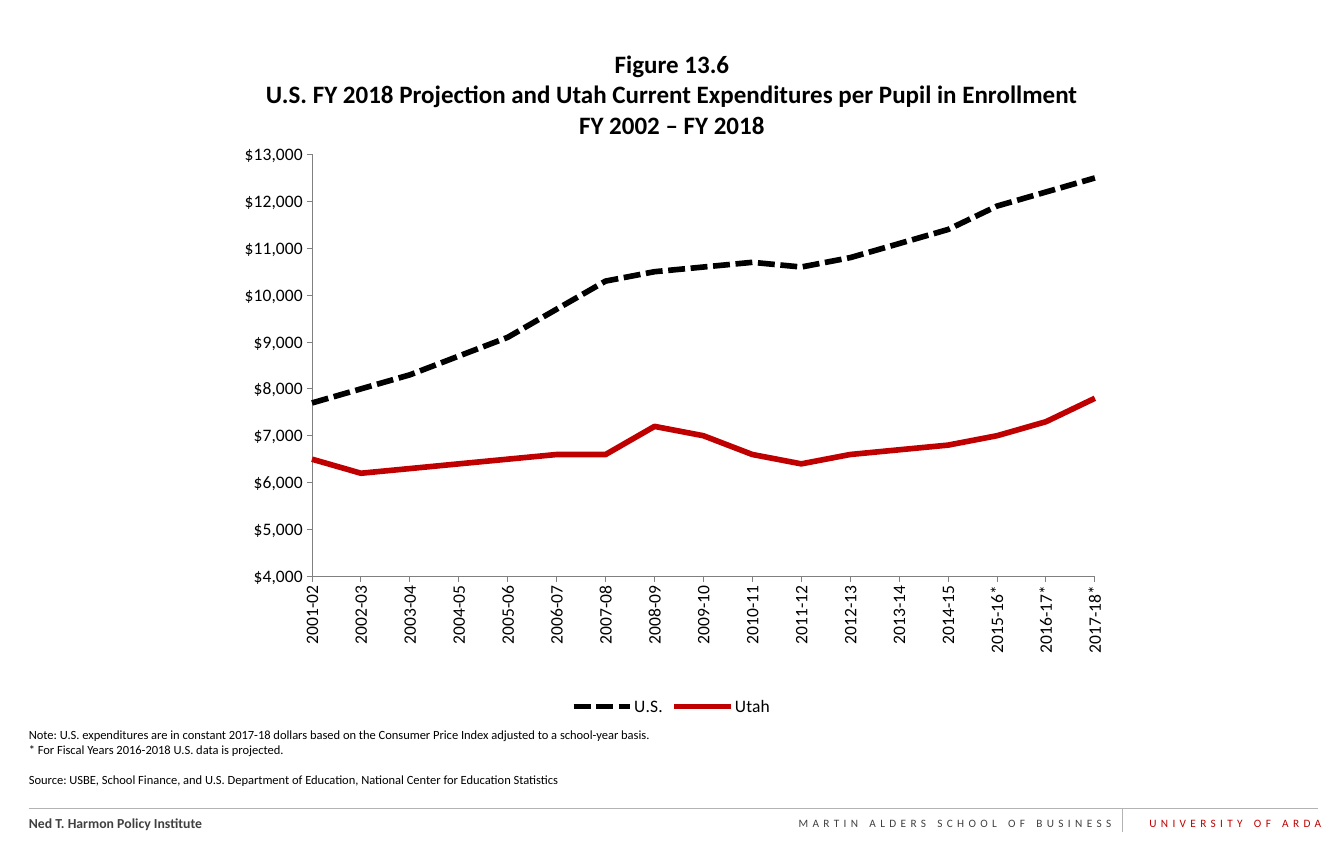
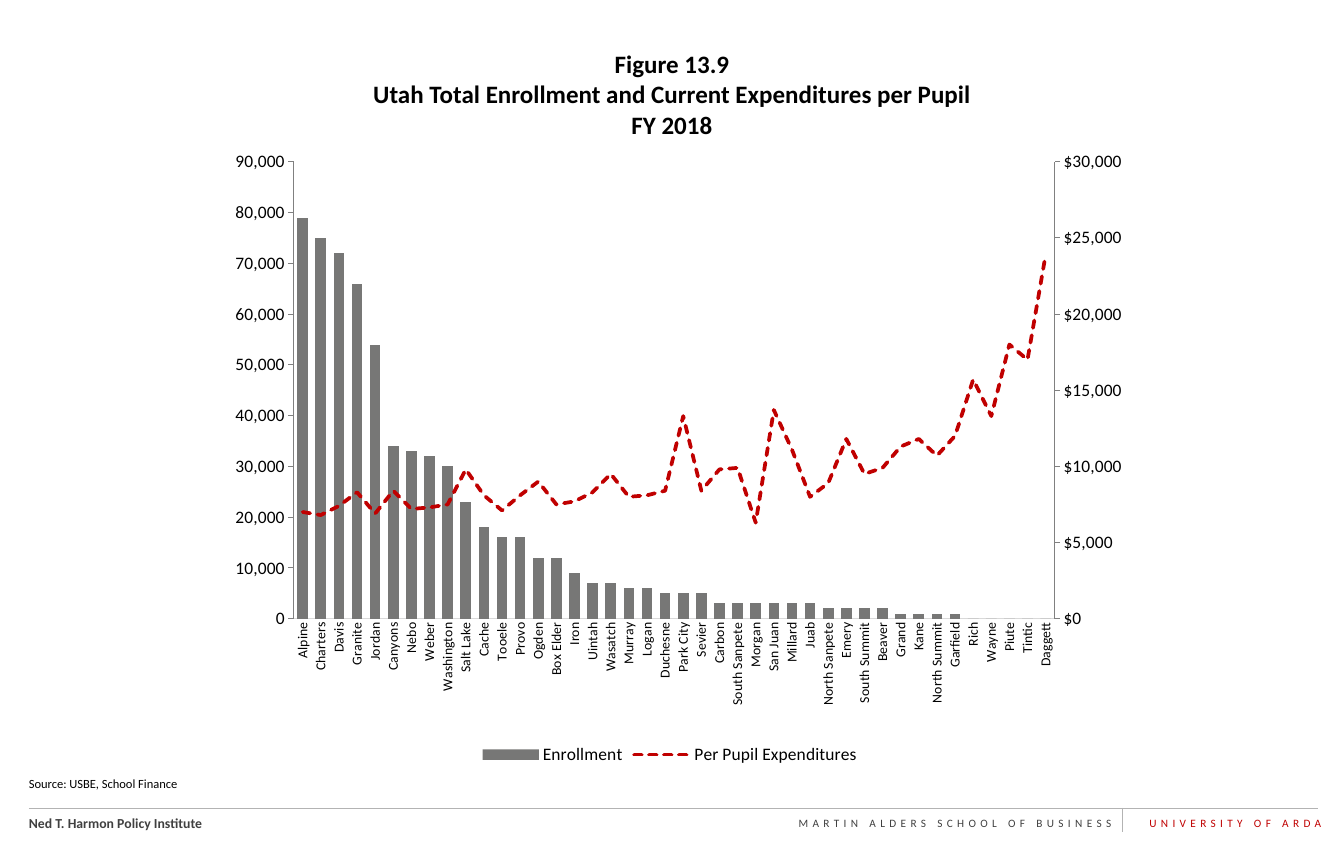
from dataclasses import dataclass
from typing import Optional

from pptx import Presentation
from pptx.chart.axis import ValueAxis
from pptx.chart.data import CategoryChartData
from pptx.dml.color import RGBColor
from pptx.enum.chart import XL_CHART_TYPE as CT, XL_LEGEND_POSITION as LP
from pptx.enum.chart import XL_MARKER_STYLE as MARKER, XL_TICK_MARK as TICK
from pptx.enum.dml import MSO_LINE
from pptx.enum.text import MSO_ANCHOR, MSO_AUTO_SIZE, PP_ALIGN
from pptx.oxml import parse_xml
from pptx.oxml.ns import nsdecls
from pptx.util import Emu, Pt

EMU_PER_PX = 10160
FONT = "Calibri"
BLACK, RED, DARK, BAR_GRAY = "000000", "C00000", "404040", "777776"
RULE, AXIS, PALE = "B3B3B3", "808080", "D9D9D9"
CONTENT_X, CONTENT_Y, CONTENT_W = 222, 143, 900


@dataclass
class Series:
    name: str
    color: str
    values: list[int]
    width: float = 0  # line width in points; 0 means columns
    dashed: bool = False
    round_cap: bool = False


@dataclass
class Scale:
    low: int
    high: int
    step: int
    fmt: str


@dataclass
class Figure:
    title: str
    notes: list[str]
    source: str
    note_y: int
    chart_h: int
    plot: tuple[float, float, float, float]
    categories: list[str]
    series: list[Series]
    scale: Scale
    category_size: int
    category_line: str
    category_tick: TICK
    right_scale: Optional[Scale] = None


DOLLARS = '"$"#,##0'
FIGURES = [
    Figure(
        "Figure 13.6\vU.S. FY 2018 Projection and Utah Current Expenditures per Pupil "
        "in Enrollment\vFY 2002 – FY 2018",
        ["Note: U.S. expenditures are in constant 2017-18 dollars based on the Consumer "
         "Price Index adjusted to a school-year basis.",
         "* For Fiscal Years 2016-2018 U.S. data is projected."],
        "Source: USBE, School Finance, and U.S. Department of Education, "
        "National Center for Education Statistics",
        723, 578, (0.1, 0.02, 0.87, 0.73),
        [f"{y}-{(y + 1) % 100:02d}" + ("*" if y >= 2015 else "") for y in range(2001, 2018)],
        [Series("U.S.", BLACK,
                [7700, 8000, 8300, 8700, 9100, 9700, 10300, 10500, 10600, 10700, 10600,
                 10800, 11100, 11400, 11900, 12200, 12500], 4.5, dashed=True),
         Series("Utah", RED,
                [6500, 6200, 6300, 6400, 6500, 6600, 6600, 7200, 7000, 6600, 6400,
                 6600, 6700, 6800, 7000, 7300, 7800], 4.5)],
        Scale(4000, 13000, 1000, DOLLARS), 14, AXIS, TICK.OUTSIDE),
    Figure(
        "Figure 13.9\vUtah Total Enrollment and Current Expenditures per Pupil\vFY 2018",
        [], "Source: USBE, School Finance",
        772, 626, (0.08, 0.03, 0.85, 0.73),
        ["Alpine", "Charters", "Davis", "Granite", "Jordan", "Canyons", "Nebo", "Weber",
         "Washington", "Salt Lake", "Cache", "Tooele", "Provo", "Ogden", "Box Elder", "Iron",
         "Uintah", "Wasatch", "Murray", "Logan", "Duchesne", "Park City", "Sevier", "Carbon",
         "South Sanpete", "Morgan", "San Juan", "Millard", "Juab", "North Sanpete", "Emery",
         "South Summit", "Beaver", "Grand", "Kane", "North Summit", "Garfield", "Rich",
         "Wayne", "Piute", "Tintic", "Daggett"],
        [Series("Enrollment", BAR_GRAY,
                [79000, 75000, 72000, 66000, 54000, 34000, 33000, 32000, 30000, 23000,
                 18000, 16000, 16000, 12000, 12000, 9000, 7000, 7000, 6000, 6000, 5000,
                 5000, 5000, 3000, 3000, 3000, 3000, 3000, 3000, 2000, 2000, 2000, 2000,
                 1000, 1000, 1000, 1000, 0, 0, 0, 0, 0]),
         Series("Per Pupil Expenditures", RED,
                [7000, 6800, 7400, 8300, 6900, 8400, 7200, 7300, 7500, 9800, 8100, 7100,
                 8100, 9000, 7500, 7700, 8300, 9500, 8000, 8100, 8400, 13300, 8400, 9800,
                 9900, 6300, 13700, 11100, 8000, 8900, 11800, 9500, 9900, 11300, 11800,
                 10700, 12000, 15700, 13300, 18000, 17000, 23900],
                3, dashed=True, round_cap=True)],
        Scale(0, 90000, 10000, "#,##0"), 11, PALE, TICK.NONE,
        Scale(0, 30000, 5000, DOLLARS)),
]


def px(n: int) -> Emu:
    return Emu(n * EMU_PER_PX)


def rgb(value: str) -> RGBColor:
    return RGBColor.from_string(value)


def style_font(font, size: float, color: str = BLACK, bold: bool = False) -> None:
    font.name, font.size, font.bold = FONT, Pt(size), bold
    font.color.rgb = rgb(color)


def style_line(line, color: str, width: float = 0.75) -> None:
    line.color.rgb = rgb(color)
    line.width = Pt(width)


def add_text(s, box: tuple[int, int, int, int], lines: list[str], size: float,
             color: str = BLACK, bold: bool = False, align=PP_ALIGN.LEFT):
    sp = s.shapes.add_textbox(*map(px, box))
    tf = sp.text_frame
    tf.word_wrap = True
    tf.text = "\n".join(lines)
    for p in tf.paragraphs:
        p.alignment = align
        style_font(p.font, size, color, bold)
    return sp


def add_spaced_text(s, x: int, w: int, text: str, color: str):
    """Add a right-aligned line of widely spaced letters."""
    sp = add_text(s, (x, 812, w, 22), [text], 9, color, align=PP_ALIGN.RIGHT)
    for props in sp.element.xpath(".//a:defRPr"):
        props.set("spc", "350")
    return sp


def add_rule(s, x1: int, y1: int, x2: int, y2: int):
    rule = s.shapes.add_connector(1, px(x1), px(y1), px(x2), px(y2))
    style_line(rule.line, RULE)
    rule.element.spPr.append(parse_xml(f"<a:effectLst {nsdecls('a')}/>"))
    return rule


def add_footer_to_layout(s) -> None:
    """Draw the footer on a slide, then hand it to the layout all slides share."""
    layout = s.slide_layout
    for holder in list(layout.placeholders)[1:]:
        layout.shapes.element.remove(holder.element)
    for sp in (
        add_text(s, (20, 810, 783, 26), ["Ned T. Harmon Policy Institute"], 11, DARK, True),
        add_spaced_text(s, 465, 655, "MARTIN ALDERS SCHOOL OF BUSINESS", DARK),
        add_spaced_text(s, 1124, 206, "UNIVERSITY OF ARDA", RED),
        add_rule(s, 29, 808, 1318, 808),
        add_rule(s, 1122, 808, 1122, 832),
    ):
        layout.shapes.element.append(sp.element)


def set_title(s, text: str) -> None:
    title = s.shapes.title
    title.left, title.top, title.width, title.height = map(px, (CONTENT_X, 45, CONTENT_W, 98))
    tf = title.text_frame
    tf.auto_size, tf.vertical_anchor = MSO_AUTO_SIZE.NONE, MSO_ANCHOR.MIDDLE
    tf.margin_left = tf.margin_right = px(6)
    tf.margin_top = tf.margin_bottom = px(4)
    p = tf.paragraphs[0]
    p.text, p.alignment = text, PP_ALIGN.CENTER
    style_font(p.font, 20, bold=True)


def style_value_axis(axis: ValueAxis, scale: Scale) -> None:
    axis.minimum_scale, axis.maximum_scale = scale.low, scale.high
    axis.major_unit = scale.step
    axis.has_major_gridlines = False
    axis.major_tick_mark, axis.minor_tick_mark = TICK.OUTSIDE, TICK.NONE
    axis.tick_labels.number_format = scale.fmt
    axis.tick_labels.number_format_is_linked = False
    style_font(axis.tick_labels.font, 14)
    style_line(axis.format.line, AXIS)


def move_last_series_to_right_axis(chart) -> ValueAxis:
    """Turn the last column series into a line measured on a second value axis."""
    ns = nsdecls("c")
    bars = chart.element.xpath(".//c:barChart")[0]
    ser = bars.xpath("c:ser")[-1]
    for flag in ser.xpath("c:invertIfNegative"):
        ser.remove(flag)
    lines = parse_xml(
        f'<c:lineChart {ns}><c:grouping val="standard"/><c:varyColors val="0"/>'
        '<c:marker val="1"/><c:axId val="5001"/><c:axId val="5002"/></c:lineChart>')
    lines.insert(2, ser)
    bars.addnext(lines)

    def axis_xml(kind: str, own: int, other: int, hidden: int, side: str, rest: str):
        return parse_xml(
            f'<c:{kind} {ns}><c:axId val="{own}"/><c:scaling><c:orientation val="minMax"/>'
            f'</c:scaling><c:delete val="{hidden}"/><c:axPos val="{side}"/>'
            f'<c:tickLblPos val="nextTo"/><c:crossAx val="{other}"/>{rest}</c:{kind}>')

    right = axis_xml("valAx", 5002, 5001, 0, "r",
                     '<c:crosses val="max"/><c:crossBetween val="between"/>')
    hidden = axis_xml("catAx", 5001, 5002, 1, "b", '<c:crosses val="autoZero"/>')
    last_axis = chart.element.xpath(".//c:valAx")[-1]
    last_axis.addnext(right)
    right.addnext(hidden)
    return ValueAxis(right)


def start_lines_on_axis(chart) -> None:
    axis = chart.element.xpath(".//c:valAx")[0]
    for old in axis.xpath("c:crossBetween"):
        axis.remove(old)
    axis.xpath("c:crosses")[0].addnext(
        parse_xml(f'<c:crossBetween {nsdecls("c")} val="midCat"/>'))


def set_plot_layout(chart, plot: tuple[float, float, float, float]) -> None:
    area = chart.element.xpath(".//c:plotArea")[0]
    for old in area.xpath("c:layout"):
        area.remove(old)
    sizes = "".join(f'<c:{tag} val="{v}"/>' for tag, v in zip("xywh", plot))
    area.insert(0, parse_xml(
        f'<c:layout {nsdecls("c")}><c:manualLayout><c:layoutTarget val="inner"/>'
        f'<c:xMode val="edge"/><c:yMode val="edge"/>{sizes}</c:manualLayout></c:layout>'))


def style_series(chart, series: list[Series]) -> None:
    drawn = [ser for plot in chart.plots for ser in plot.series]
    for ser, look in zip(drawn, series):
        if not look.width:
            ser.format.fill.solid()
            ser.format.fill.fore_color.rgb = rgb(look.color)
            continue
        style_line(ser.format.line, look.color, look.width)
        ser.format.line.dash_style = MSO_LINE.SQUARE_DOT if look.dashed else MSO_LINE.SOLID
        ser.marker.style = MARKER.NONE
        ser.smooth = False
    for ln, look in zip(chart.element.xpath(".//c:ser/c:spPr/a:ln"),
                        [look for look in series if look.width]):
        ln.set("cap", "rnd" if look.round_cap else "flat")


def add_figure_chart(s, fig: Figure) -> None:
    data = CategoryChartData()
    data.categories = fig.categories
    for ser in fig.series:
        data.add_series(ser.name, ser.values)
    kind = CT.COLUMN_CLUSTERED if fig.right_scale else CT.LINE
    box = map(px, (CONTENT_X, CONTENT_Y, CONTENT_W, fig.chart_h))
    chart = s.shapes.add_chart(kind, *box, data).chart
    chart.has_title = False
    style_font(chart.font, 14)
    chart.has_legend = True
    chart.legend.position, chart.legend.include_in_layout = LP.BOTTOM, False
    style_font(chart.legend.font, 14)

    style_value_axis(chart.value_axis, fig.scale)
    axis = chart.category_axis
    axis.has_major_gridlines = False
    axis.major_tick_mark, axis.minor_tick_mark = fig.category_tick, TICK.NONE
    style_font(axis.tick_labels.font, fig.category_size)
    style_line(axis.format.line, fig.category_line)
    chart.element.xpath(".//c:catAx/c:txPr/a:bodyPr")[0].set("rot", "-5400000")

    if fig.right_scale:
        chart.plots[0].gap_width, chart.plots[0].overlap = 70, -27
        style_value_axis(move_last_series_to_right_axis(chart), fig.right_scale)
    else:
        start_lines_on_axis(chart)
    for plot in chart.plots:
        plot.vary_by_categories = False
    style_series(chart, fig.series)
    set_plot_layout(chart, fig.plot)


def main() -> None:
    prs = Presentation()
    prs.slide_width, prs.slide_height = px(1344), px(846)
    for i, fig in enumerate(FIGURES):
        s = prs.slides.add_slide(prs.slide_layouts[5])
        if i == 0:
            add_footer_to_layout(s)
        set_title(s, fig.title)
        note = add_text(s, (20, fig.note_y, 900, 795 - fig.note_y), fig.notes + [fig.source], 10)
        if fig.notes:
            note.text_frame.paragraphs[-1].space_before = Pt(12)
        add_figure_chart(s, fig)
    prs.save("out.pptx")


if __name__ == "__main__":
    main()
